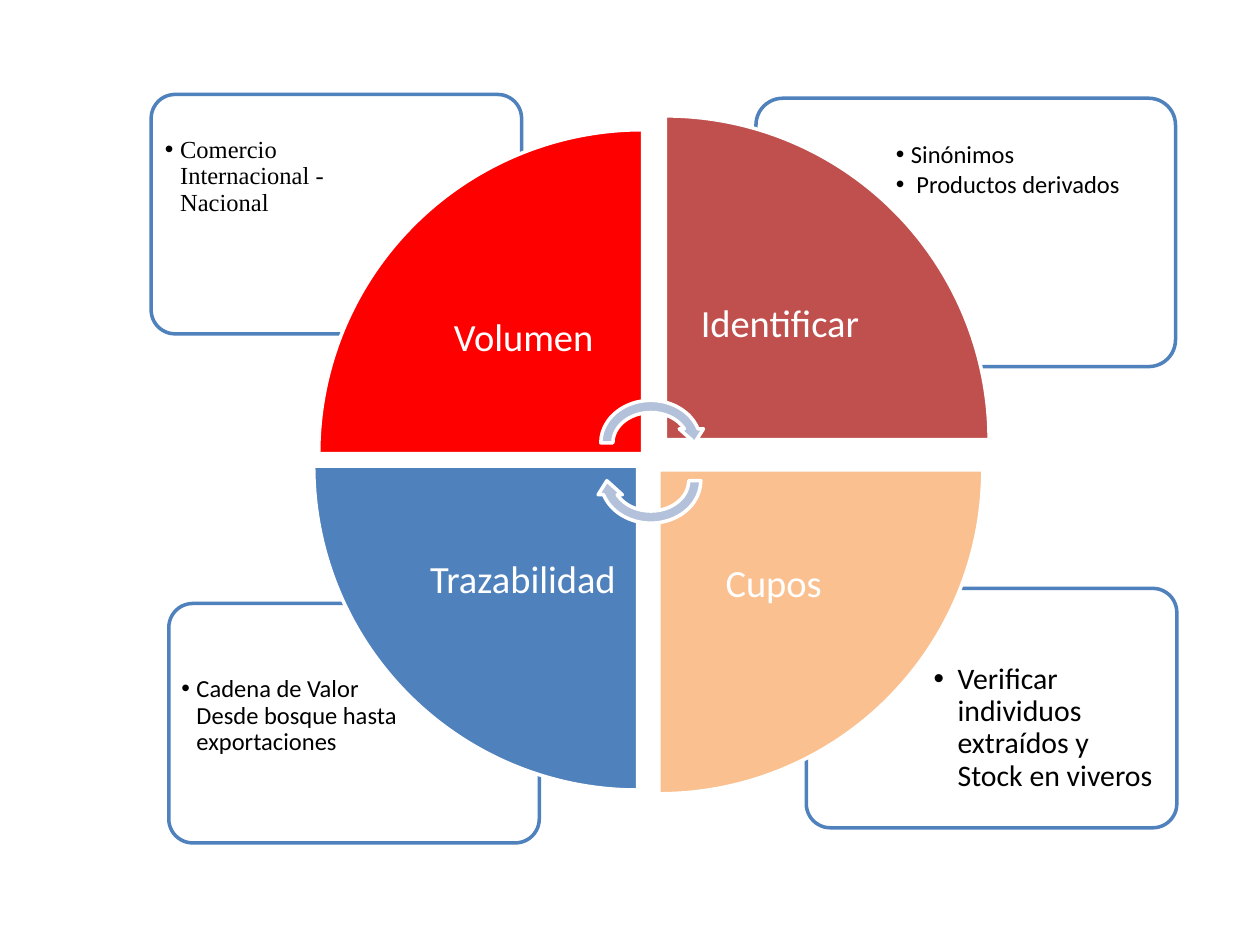
from lxml.etree import SubElement
from pptx import Presentation
from pptx.dml.color import RGBColor
from pptx.enum.shapes import MSO_SHAPE
from pptx.enum.text import MSO_ANCHOR, PP_ALIGN
from pptx.oxml.ns import qn
from pptx.util import Inches, Pt

BLUE, WHITE, BLACK = "4F81BD", "FFFFFF", "000000"
WEDGE_SIZE, LABEL_SIZE = 2.57, 1.82

# Card: left, top, width, height; text: left, top, width, height, inset, indent
CARDS = [
    ((6.4, 4.67, 2.94, 1.9), (7.32, 5.18, 1.97, 1.34), 0.09, 0.19,
     17, "Calibri", ["Verificar individuos extraídos y Stock en viveros"]),
    ((1.34, 4.79, 2.94, 1.9), (1.38, 5.31, 1.97, 1.34), 0.06, 0.12,
     14, "Calibri", ["Cadena de Valor Desde bosque hasta exportaciones"]),
    ((6, 0.78, 3.33, 2.13), (7.05, 1.07, 2.24, 1.26), 0.06, 0.12,
     14, "Calibri", ["Sinónimos", " Productos derivados"]),
    ((1.2, 0.75, 2.94, 1.9), (1.25, 1.03, 1.97, 1.1), 0.06, 0.12,
     14, "Times New Roman", ["Comercio Internacional - Nacional"]),
]

# Wedge: label, left, top, rotation, colour
WEDGES = [
    ("Volumen ", 2.53, 1.03, 0, "FF0000"),
    ("Identificar", 5.28, 0.92, 90, "C0504D"),
    ("Cupos", 5.23, 3.73, 180, "FAC090"),
    ("Trazabilidad", 2.49, 3.7, 270, BLUE),
]


def color(value):
    return RGBColor.from_string(value)


def add_block(slide, preset, box, fill, line, rotation=0):
    block = slide.shapes.add_shape(preset, *map(Inches, box))
    block.rotation = rotation
    block.shadow.inherit = False
    block.fill.solid()
    block.fill.fore_color.rgb = color(fill)
    block.line.color.rgb = color(line)
    block.line.width = Pt(2)
    return block


def add_text_frame(slide, box, inset):
    frame = slide.shapes.add_textbox(*map(Inches, box)).text_frame
    frame.word_wrap = True
    frame.margin_left = frame.margin_right = Inches(inset)
    frame.margin_top = frame.margin_bottom = Inches(inset)
    return frame


def write(paragraph, text, size, font, text_color):
    paragraph.line_spacing = 0.9
    run = paragraph.add_run()
    run.text = text
    run.font.size = Pt(size)
    run.font.name = font
    run.font.color.rgb = color(text_color)


def set_bullet(paragraph, indent):
    properties = paragraph._p.get_or_add_pPr()
    properties.set("marL", str(Inches(indent)))
    properties.set("indent", str(-Inches(indent)))
    SubElement(properties, qn("a:buFont"), typeface="Arial")
    SubElement(properties, qn("a:buChar"), char="•")


def add_card(slide, card_box, text_box, inset, indent, size, font, items):
    card = add_block(slide, MSO_SHAPE.ROUNDED_RECTANGLE, card_box, WHITE, BLUE)
    card.adjustments[0] = 0.1
    frame = add_text_frame(slide, text_box, inset)
    for number, item in enumerate(items):
        paragraph = frame.add_paragraph() if number else frame.paragraphs[0]
        write(paragraph, item, size, font, BLACK)
        paragraph.space_after = Pt(2)
        set_bullet(paragraph, indent)


def add_wedge(slide, label, left, top, rotation, fill):
    add_block(slide, MSO_SHAPE.PIE_WEDGE, (left, top, WEDGE_SIZE, WEDGE_SIZE),
              fill, WHITE, rotation)
    # The label sits in the corner nearest the centre of the wheel
    shift = WEDGE_SIZE - LABEL_SIZE
    label_left = left + (shift if rotation in (0, 270) else 0)
    label_top = top + (shift if rotation in (0, 90) else 0)
    frame = add_text_frame(
        slide, (label_left, label_top, LABEL_SIZE, LABEL_SIZE), 0.1)
    frame.vertical_anchor = MSO_ANCHOR.MIDDLE
    paragraph = frame.paragraphs[0]
    paragraph.alignment = PP_ALIGN.CENTER
    write(paragraph, label, 22, "Calibri", WHITE)


def main():
    presentation = Presentation()
    presentation.slide_width = Inches(10)
    presentation.slide_height = Inches(7.5)
    slide = presentation.slides.add_slide(presentation.slide_layouts[6])

    # Corner cards behind the wheel
    for card in CARDS:
        add_card(slide, *card)

    # Four quarters of the wheel
    for wedge in WEDGES:
        add_wedge(slide, *wedge)

    # Cycle arrows in the centre
    for top, rotation in ((3.13, 0), (3.43, 180)):
        add_block(slide, MSO_SHAPE.CIRCULAR_ARROW, (4.72, top, 0.89, 0.77),
                  "B3C1DB", WHITE, rotation)

    presentation.save("out.pptx")


if __name__ == "__main__":
    main()
